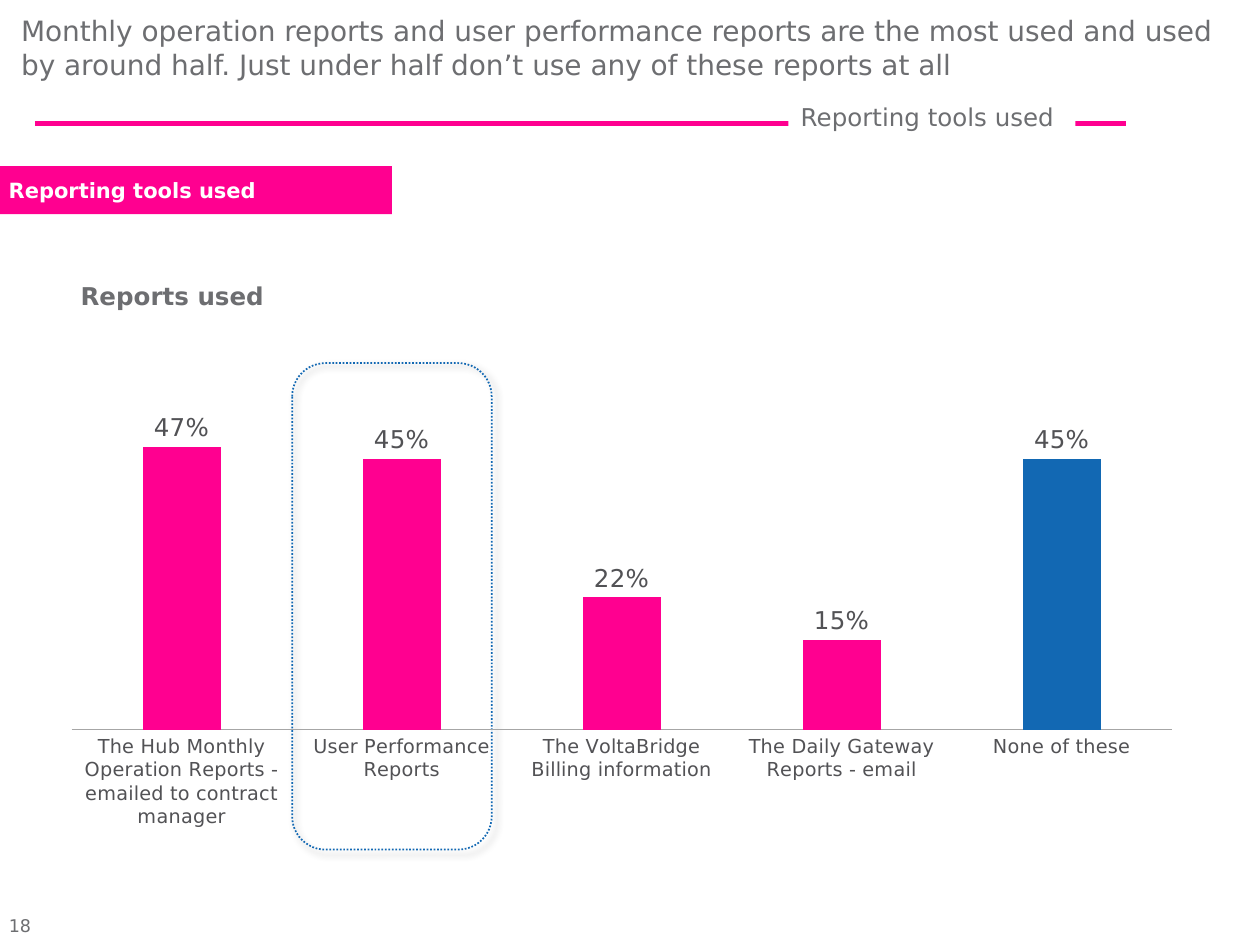
from lxml import etree
from pptx import Presentation
from pptx.chart import data as chart_data
from pptx.dml import color
from pptx.enum import chart as chart_enum, dml, shapes, text
from pptx.oxml import ns
from pptx.util import Pt

FONT = "DejaVu Sans"
COLORS = {
    "pink": "FF0090",
    "blue": "1268B3",
    "grey": "6D6E71",
    "label": "525255",
    "axis": "A6A6A6",
    "white": "FFFFFF",
    "shadow": "000000",
}
REPORTS = {
    "The Hub Monthly Operation Reports - emailed to contract manager": 0.47,
    "User Performance Reports": 0.45,
    "The VoltaBridge Billing information": 0.22,
    "The Daily Gateway Reports - email": 0.15,
    "None of these": 0.45,
}


def rgb(name):
    return color.RGBColor.from_string(COLORS[name])


def points(*lengths):
    return [Pt(length) for length in lengths]


def add_child(parent, tag, **attributes):
    """Append a namespaced XML element such as 'a:effectLst'."""
    return etree.SubElement(parent, ns.qn(tag), attributes)


def style_font(font, size, ink="grey", bold=False):
    font.name = FONT
    font.size = Pt(size)
    font.bold = bold
    font.color.rgb = rgb(ink)


def add_text(slide, wording, box, size, ink="grey", bold=False, fill=None,
             anchor=text.MSO_ANCHOR.TOP, insets=(7.2, 3.6)):
    """Add left-aligned wording, on a filled rectangle if fill is given."""
    if fill:
        holder = slide.shapes.add_shape(shapes.MSO_SHAPE.RECTANGLE, *points(*box))
        holder.shadow.inherit = False
        holder.fill.solid()
        holder.fill.fore_color.rgb = rgb(fill)
        holder.line.fill.background()
    else:
        holder = slide.shapes.add_textbox(*points(*box))
    frame = holder.text_frame
    frame.word_wrap = True
    frame.vertical_anchor = anchor
    frame.margin_left = frame.margin_right = Pt(insets[0])
    frame.margin_top = frame.margin_bottom = Pt(insets[1])
    paragraph = frame.paragraphs[0]
    paragraph.alignment = text.PP_ALIGN.LEFT
    run = paragraph.add_run()
    run.text = wording
    style_font(run.font, size, ink, bold)


def add_rule(slide, left, right, y):
    rule = slide.shapes.add_connector(
        shapes.MSO_CONNECTOR.STRAIGHT, *points(left, y, right, y))
    rule.line.color.rgb = rgb("pink")
    rule.line.width = Pt(3)
    add_child(rule._element.spPr, "a:effectLst")


def add_highlight(slide, box):
    """Add a dotted rounded frame with a soft shadow."""
    frame = slide.shapes.add_shape(
        shapes.MSO_SHAPE.ROUNDED_RECTANGLE, *points(*box))
    frame.fill.background()
    frame.line.color.rgb = rgb("blue")
    frame.line.width = Pt(1)
    frame.line.dash_style = dml.MSO_LINE.ROUND_DOT
    frame.shadow.inherit = False
    effects = frame._element.spPr.find(ns.qn("a:effectLst"))
    shadow = add_child(effects, "a:outerShdw", blurRad=str(Pt(4)),
                       dist=str(Pt(3)), dir="2700000", rotWithShape="0")
    tint = add_child(shadow, "a:srgbClr", val=COLORS["shadow"])
    add_child(tint, "a:alpha", val="40000")


def set_plot_area(chart, **fractions):
    """Fix the inner plot area as fractions (x, y, w, h) of the chart."""
    plot_area = chart._chartSpace.chart.plotArea
    layout = plot_area.find(ns.qn("c:layout"))
    if layout is None:
        layout = etree.Element(ns.qn("c:layout"))
        plot_area.insert(0, layout)
    manual = add_child(layout, "c:manualLayout")
    add_child(manual, "c:layoutTarget", val="inner")
    for side in "xy":
        add_child(manual, f"c:{side}Mode", val="edge")
    for side in "xywh":
        add_child(manual, f"c:{side}", val=str(fractions[side]))


def add_report_chart(slide, box):
    usage = chart_data.CategoryChartData(number_format="0%")
    usage.categories = list(REPORTS)
    usage.add_series("Series 1", list(REPORTS.values()))
    chart = slide.shapes.add_chart(
        chart_enum.XL_CHART_TYPE.COLUMN_CLUSTERED, *points(*box), usage).chart
    chart.has_legend = False
    chart.has_title = False
    style_font(chart.font, 10)
    set_plot_area(chart, x=0.04, y=0, w=0.9, h=0.71)

    report_axis = chart.category_axis
    report_axis.major_tick_mark = chart_enum.XL_TICK_MARK.NONE
    report_axis.format.line.color.rgb = rgb("axis")
    report_axis.format.line.width = Pt(0.75)
    style_font(report_axis.tick_labels.font, 11, "label")

    share_axis = chart.value_axis
    share_axis.minimum_scale = 0
    share_axis.maximum_scale = 0.8
    share_axis.major_unit = 0.2
    share_axis.has_major_gridlines = False
    share_axis.visible = False

    plot = chart.plots[0]
    plot.gap_width = 182
    plot.vary_by_categories = False
    columns = plot.series[0]
    none_column = columns.points[len(REPORTS) - 1]
    for part, ink in ((columns, "pink"), (none_column, "blue")):
        part.format.fill.solid()
        part.format.fill.fore_color.rgb = rgb(ink)

    labels = columns.data_labels
    labels.show_value = True
    labels.position = chart_enum.XL_LABEL_POSITION.OUTSIDE_END
    labels.number_format = "0%"
    labels.number_format_is_linked = False
    style_font(labels.font, 14, "label")


def main():
    deck = Presentation()
    deck.slide_width, deck.slide_height = points(720, 540)
    slide = deck.slides.add_slide(deck.slide_layouts[6])

    add_rule(slide, 20, 643.5, 70.5)
    add_highlight(slide, (167, 207.5, 114, 278))
    add_text(slide, "18", (-2, 519, 82, 19.5), 10, anchor=text.MSO_ANCHOR.BOTTOM)
    add_report_chart(slide, (13, 142, 698.5, 387.5))
    add_text(slide, "Monthly operation reports and user performance reports are "
             "the most used and used by around half. Just under half don’t use "
             "any of these reports at all",
             (5, -8.5, 715, 71), 16, anchor=text.MSO_ANCHOR.MIDDLE)
    add_text(slide, "Reporting tools used", (0, 95, 224, 27.5), 12, ink="white",
             bold=True, fill="pink", anchor=text.MSO_ANCHOR.MIDDLE,
             insets=(5, 3))
    add_text(slide, "Reporting tools used", (450.5, 54.5, 164, 24.5), 14,
             fill="white")
    add_text(slide, "Reports used", (39, 157, 128, 24.5), 14, bold=True)

    deck.save("out.pptx")


if __name__ == "__main__":
    main()
